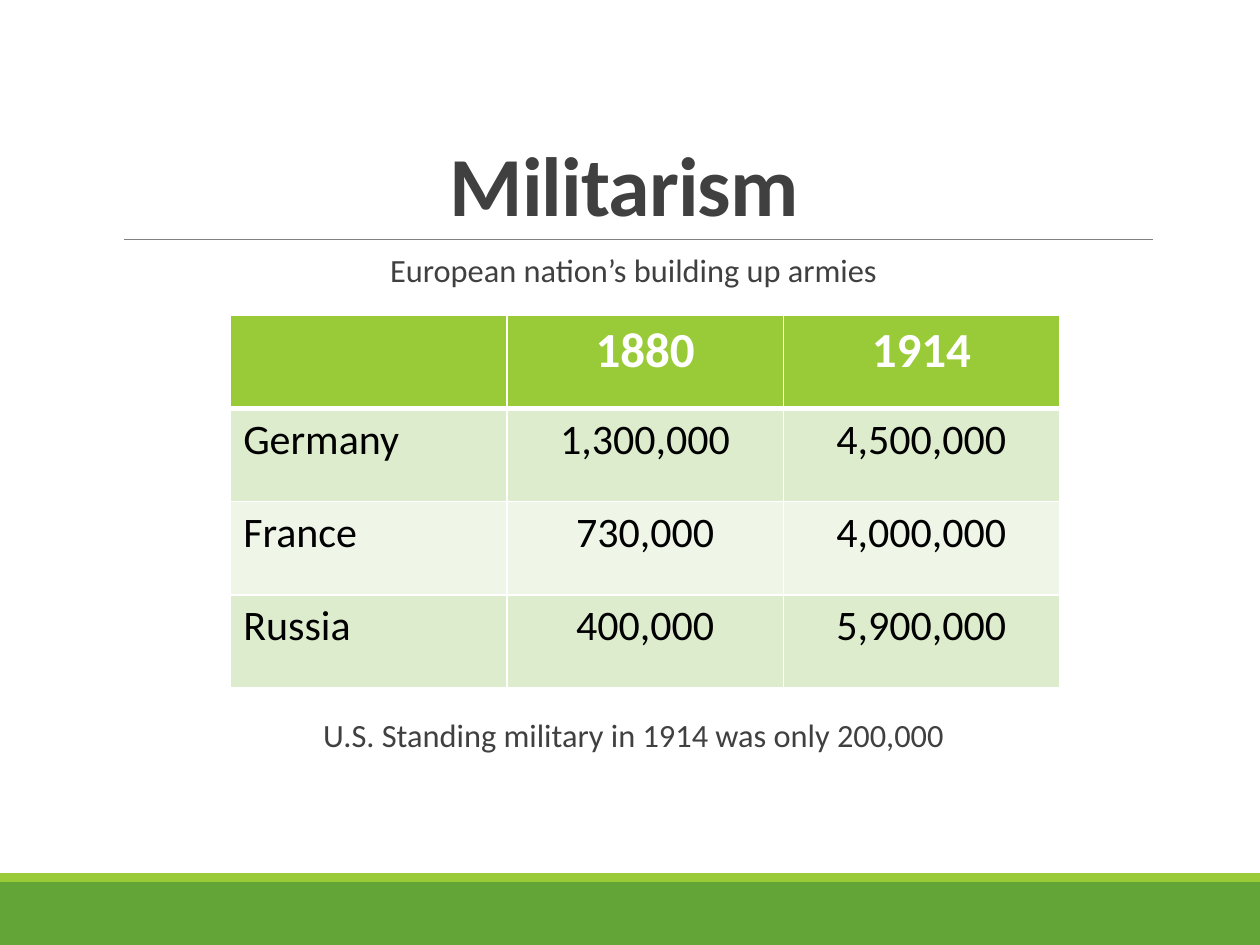
"""Build the Militarism slide: title, two captions and an army-size table."""
from pptx import Presentation
from pptx.dml.color import RGBColor
from pptx.enum import shapes, text
from pptx.oxml.ns import qn
from pptx.util import Cm, Pt
from lxml import etree

TITLE = "Militarism "
NOTES = [("European nation’s building up armies", 12),
         ("U.S. Standing military in 1914 was only 200,000", 248)]
ROWS = [("", "1880", "1914"),
        ("Germany", "1,300,000", "4,500,000"),
        ("France", "730,000", "4,000,000"),
        ("Russia", "400,000", "5,900,000")]
BARS = [("base", 17.78, 1.27), ("lime", 17.6, 0.18)]
THEME = {
    "font": "Calibri",
    "ink": "404040", "rule": "808080", "base": "63A537", "lime": "99CB38",
    "odd": "DEECCE", "even": "EFF6E8", "white": "FFFFFF", "black": "000000",
    "title": 48, "note": 18.5, "head": 28, "cell": 24,
}
WIDE, HIGH = 25.4, 19.05
LEFT, SPAN = 2.29, 20.96
MID, END = text.PP_ALIGN.CENTER, text.PP_ALIGN.LEFT


def tint(name):
    return RGBColor.from_string(THEME[name])


def write(para, words, size, color, bold=False, align=MID):
    para.alignment = align
    run = para.add_run()
    run.text = words
    font = run.font
    font.name, font.size, font.bold = THEME["font"], Pt(THEME[size]), bold
    font.color.rgb = tint(color)
    return run


def place(shape, top, high):
    shape.left, shape.top = Cm(LEFT), Cm(top)
    shape.width, shape.height = Cm(SPAN), Cm(high)
    frame = shape.text_frame
    frame.word_wrap, frame.auto_size = True, text.MSO_AUTO_SIZE.NONE
    return frame


def edge(cell, side, width):
    line = etree.SubElement(cell._tc.get_or_add_tcPr(), qn("a:ln" + side), w=str(Pt(width)))
    fill = etree.SubElement(line, qn("a:solidFill"))
    etree.SubElement(fill, qn("a:srgbClr"), val=THEME["white"])


def frame(slide):
    for name, top, high in BARS:
        bar = slide.shapes.add_shape(
            shapes.MSO_SHAPE.RECTANGLE, 0, Cm(top), Cm(WIDE), Cm(high))
        bar.shadow.inherit = False
        bar.fill.solid()
        bar.fill.fore_color.rgb = tint(name)
        bar.line.fill.background()
    rule = slide.shapes.add_connector(
        shapes.MSO_CONNECTOR.STRAIGHT, Cm(2.49), Cm(4.83), Cm(23.24), Cm(4.83))
    rule.line.color.rgb, rule.line.width = tint("rule"), Pt(0.5)
    etree.SubElement(rule._element.spPr, qn("a:effectLst"))


def words(slide):
    box = place(slide.shapes.title, 0.79, 4.04)
    box.vertical_anchor = text.MSO_ANCHOR.BOTTOM
    para = box.paragraphs[0]
    para.line_spacing = 0.85
    run = write(para, TITLE, "title", "ink", True)
    run.font._element.set("spc", "-50")

    box = place(slide.placeholders[1], 5.13, 11.18)
    box.margin_left = box.margin_right = 0
    for num, (note, gap) in enumerate(NOTES):
        para = box.add_paragraph() if num else box.paragraphs[0]
        para.line_spacing = 0.7
        para.space_before, para.space_after = Pt(gap), Pt(2)
        prop = para._p.get_or_add_pPr()
        prop.set("marL", "0")
        prop.set("indent", "0")
        etree.SubElement(prop, qn("a:buNone"))
        write(para, note, "note", "ink")


def table(slide):
    wide, high = 5.57, 1.88
    cols = len(ROWS[0])
    grid = slide.shapes.add_table(
        len(ROWS), cols, Cm(4.65), Cm(6.35), Cm(wide * cols), Cm(high * len(ROWS))).table
    for col in grid.columns:
        col.width = Cm(wide)
    for row, line in enumerate(ROWS):
        grid.rows[row].height = Cm(high)
        head = row == 0
        for col, value in enumerate(line):
            cell = grid.cell(row, col)
            for side in "LRTB":
                thick = (head and side == "B") or (row == 1 and side == "T")
                edge(cell, side, 3 if thick else 1)
            cell.fill.solid()
            cell.fill.fore_color.rgb = tint("lime" if head else "odd" if row % 2 else "even")
            if value:
                write(cell.text_frame.paragraphs[0], value, "head" if head else "cell",
                      "white" if head else "black", head, MID if col else END)


def main():
    deck = Presentation()
    deck.slide_width, deck.slide_height = Cm(WIDE), Cm(HIGH)
    slide = deck.slides.add_slide(deck.slide_layouts[1])
    frame(slide)
    words(slide)
    table(slide)
    deck.save("out.pptx")


if __name__ == "__main__":
    main()
